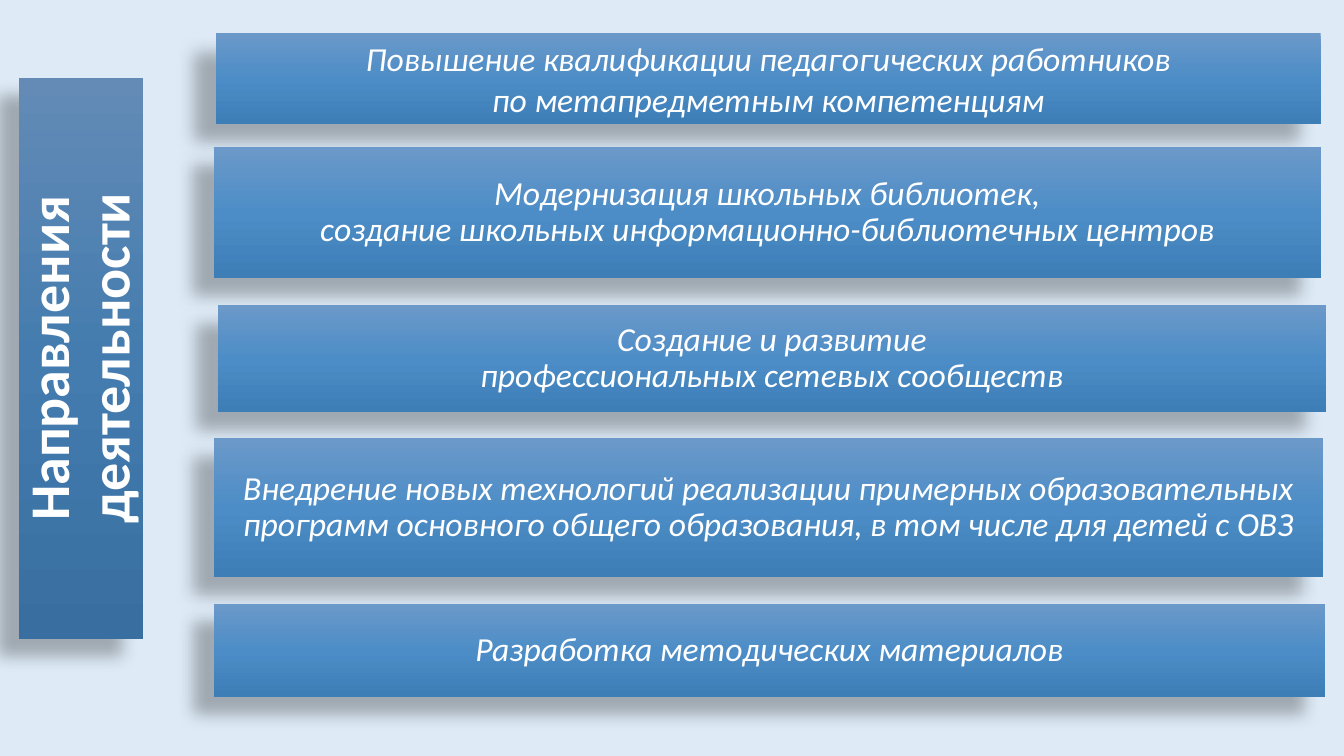
import dataclasses

import lxml.etree
import pptx
import pptx.dml.color
import pptx.enum.shapes
import pptx.enum.text
import pptx.oxml.ns
import pptx.util

Inches = pptx.util.Inches
Pt = pptx.util.Pt


@dataclasses.dataclass(frozen=True)
class Theme:
    font: str = "Calibri"
    background: str = "DEEBF7"
    text: str = "FFFFFF"
    shadow: str = "000000"
    panel: tuple = ("638BB6", "447CAF", "386FA0")
    bar: tuple = ("6B99C9", "4D8DC7", "3E7EB7")
    title_size: int = 40
    bar_size: int = 24


class SlideBuilder:
    def __init__(self, deck, theme):
        self.theme = theme
        self.page = deck.slides.add_slide(deck.slide_layouts[5])
        fill = self.page.background.fill
        fill.solid()
        fill.fore_color.rgb = pptx.dml.color.RGBColor.from_string(theme.background)

    def decorate(self, box, colors):
        box.line.fill.background()
        box.shadow.inherit = False
        properties = box.element.spPr
        namespace = pptx.oxml.ns.nsdecls("a")
        stops = "".join(
            f'<a:gs pos="{index * 50000}"><a:srgbClr val="{color}"/></a:gs>'
            for index, color in enumerate(colors)
        )
        gradient = lxml.etree.fromstring(
            f'<a:gradFill {namespace} rotWithShape="0"><a:gsLst>{stops}</a:gsLst>'
            '<a:lin ang="5400000" scaled="0"/></a:gradFill>'
        )
        shadow = lxml.etree.fromstring(
            f'<a:outerShdw {namespace} blurRad="{Pt(11.8)}" dist="{Pt(19.7)}" '
            f'dir="{141 * 60000}" algn="ctr" rotWithShape="0">'
            f'<a:srgbClr val="{self.theme.shadow}"><a:alpha val="28000"/></a:srgbClr>'
            '</a:outerShdw>'
        )
        properties.find(pptx.oxml.ns.qn("a:ln")).addprevious(gradient)
        properties.find(pptx.oxml.ns.qn("a:effectLst")).append(shadow)

    def fill_text(self, box, lines, size, inset, spacing, after, bold=False, italic=False):
        frame = box.text_frame
        frame.word_wrap = True
        frame.auto_size = pptx.enum.text.MSO_AUTO_SIZE.NONE
        frame.vertical_anchor = pptx.enum.text.MSO_ANCHOR.MIDDLE
        frame.margin_left = frame.margin_right = Inches(inset)
        frame.margin_top = frame.margin_bottom = Inches(inset)
        for index, line in enumerate(lines):
            para = frame.add_paragraph() if index else frame.paragraphs[0]
            para.alignment = pptx.enum.text.PP_ALIGN.CENTER
            para.line_spacing = spacing
            para.space_before = Pt(0)
            para.space_after = Pt(0)
            span = para.add_run()
            span.text = line
            span.font.name = self.theme.font
            span.font.size = Pt(size)
            span.font.bold = bold
            span.font.italic = italic
            span.font.color.rgb = pptx.dml.color.RGBColor.from_string(self.theme.text)
        para.space_after = Pt(after * size)

    def title(self, text, left, top, width, height):
        box = self.page.shapes.title
        box.left, box.top = Inches(left), Inches(top)
        box.width, box.height = Inches(width), Inches(height)
        box.rotation = 270
        self.decorate(box, self.theme.panel)
        self.fill_text(box, [text], self.theme.title_size, 0.03, 0.9, 0.35, bold=True)

    def bar(self, lines, left, top, width, height, spacing=0.9, after=0.35):
        box = self.page.shapes.add_shape(
            pptx.enum.shapes.MSO_SHAPE.RECTANGLE,
            Inches(left), Inches(top), Inches(width), Inches(height),
        )
        self.decorate(box, self.theme.bar)
        self.fill_text(box, lines, self.theme.bar_size, 0.02, spacing, after, italic=True)


def main():
    deck = pptx.Presentation()
    deck.slide_width = Inches(13.33)
    deck.slide_height = Inches(7.5)
    builder = SlideBuilder(deck, Theme())
    builder.title("Направления деятельности", -1.98, 2.94, 5.57, 1.23)
    builder.bar(
        ["Повышение квалификации педагогических работников",
         "по метапредметным компетенциям"],
        2.14, 0.33, 10.96, 0.9, spacing=1.0, after=0,
    )
    builder.bar(
        ["Модернизация школьных библиотек,",
         "создание школьных информационно-библиотечных центров"],
        2.12, 1.46, 10.98, 1.3, after=0,
    )
    builder.bar(
        ["Создание и развитие", "профессиональных сетевых сообществ"],
        2.16, 3.03, 10.99, 1.06,
    )
    builder.bar(
        ["Внедрение новых технологий реализации примерных образовательных "
         "программ основного общего образования, в том числе для детей с ОВЗ"],
        2.12, 4.35, 11, 1.37,
    )
    builder.bar(["Разработка методических материалов"], 2.12, 5.99, 11.02, 0.92)
    deck.save("out.pptx")


if __name__ == "__main__":
    main()
